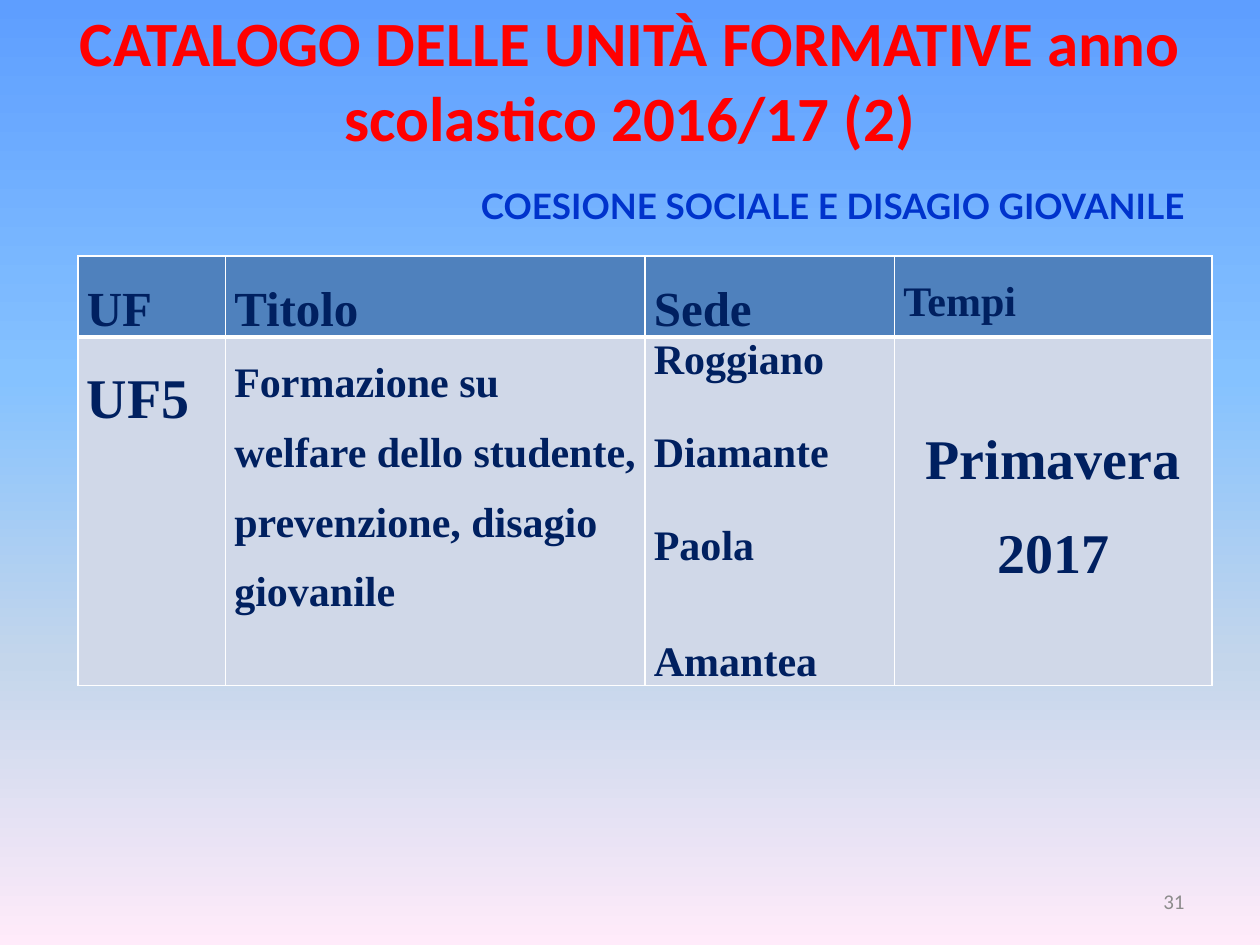
from lxml import etree
from pptx import Presentation
from pptx.dml.color import RGBColor
from pptx.enum.text import MSO_ANCHOR, MSO_AUTO_SIZE, PP_ALIGN
from pptx.oxml.ns import qn
from pptx.util import Inches, Pt

CENTER, LEFT, RIGHT = PP_ALIGN.CENTER, PP_ALIGN.LEFT, PP_ALIGN.RIGHT
MIDDLE = MSO_ANCHOR.MIDDLE
NO_AUTOFIT = MSO_AUTO_SIZE.NONE

COLORS = {
    "title": "FF0000",
    "subtitle": "0033CC",
    "table_text": "002060",
    "header": "4F81BD",
    "body": "D0D8E8",
    "border": "FFFFFF",
    "number": "8C8C8C",
}
BACKGROUND_STOPS = [(0, "5E9EFF"), (40, "85C2FF"), (70, "C4D6EB"), (100, "FFEBFA")]
COLUMN_WIDTHS = [1.17, 3.33, 1.98, 2.52]
ROW_HEIGHTS = [0.64, 2.75]
HEADERS = [("UF", 28), ("Titolo", 28), ("Sede", 28), ("Tempi", 24)]
PLACES = ["Roggiano", "Diamante", "Paola", "Amantea"]


def style_paragraph(paragraph, font, size, color, bold=True, alignment=LEFT):
    paragraph.alignment = alignment
    paragraph.font.name = font
    paragraph.font.size = Pt(size)
    paragraph.font.bold = bold
    paragraph.font.color.rgb = RGBColor.from_string(COLORS[color])


def paint_background(slide):
    fill = slide.background.fill
    fill.gradient()
    fill.gradient_angle = 270
    stops = slide.element.find(".//" + qn("a:gsLst"))
    for stop in list(stops):
        stops.remove(stop)
    for position, color in BACKGROUND_STOPS:
        stop = etree.SubElement(stops, qn("a:gs"), pos=str(position * 1000))
        etree.SubElement(stop, qn("a:srgbClr"), val=color)


def place_title(slide, box):
    title = slide.shapes.title
    title.left, title.top, title.width, title.height = map(Inches, box)
    frame = title.text_frame
    frame.text = "CATALOGO DELLE UNITÀ FORMATIVE anno scolastico 2016/17 (2)"
    frame.auto_size = NO_AUTOFIT
    frame.vertical_anchor = MIDDLE
    frame.margin_bottom = Inches(0.65)
    style_paragraph(frame.paragraphs[0], "Calibri", 36, "title", alignment=CENTER)


def place_text(slide, box, text, font, size, color, bold, alignment, wrap):
    frame = slide.shapes.add_textbox(*map(Inches, box)).text_frame
    frame.text = text
    frame.word_wrap = wrap
    frame.vertical_anchor = MIDDLE
    style_paragraph(frame.paragraphs[0], font, size, color, bold, alignment)


def draw_borders(cell, top, bottom):
    properties = cell._tc.get_or_add_tcPr()
    for side, width in (("L", 1), ("R", 1), ("T", top), ("B", bottom)):
        line = etree.SubElement(properties, qn("a:ln" + side), w=str(Pt(width)))
        fill = etree.SubElement(line, qn("a:solidFill"))
        etree.SubElement(fill, qn("a:srgbClr"), val=COLORS["border"])


def fill_cell(cell, lines, size, color, top, bottom, alignment=LEFT):
    draw_borders(cell, top, bottom)
    cell.fill.solid()
    cell.fill.fore_color.rgb = RGBColor.from_string(COLORS[color])
    cell.margin_left = cell.margin_right = Inches(0.07)
    cell.margin_top = cell.margin_bottom = 0
    cell.text = "\n".join(lines)
    paragraphs = cell.text_frame.paragraphs
    for paragraph in paragraphs:
        style_paragraph(paragraph, "Times New Roman", size, "table_text", alignment=alignment)
    for paragraph in paragraphs[1:]:
        paragraph.space_before = Pt(26.6)
    paragraphs[-1].line_spacing = 1.5


def place_table(slide, left, top):
    box = map(Inches, (left, top, sum(COLUMN_WIDTHS), sum(ROW_HEIGHTS)))
    table = slide.shapes.add_table(len(ROW_HEIGHTS), len(COLUMN_WIDTHS), *box).table
    table.horz_banding = False
    for column, width in zip(table.columns, COLUMN_WIDTHS):
        column.width = Inches(width)
    for row, height in zip(table.rows, ROW_HEIGHTS):
        row.height = Inches(height)
    for column, (text, size) in enumerate(HEADERS):
        fill_cell(table.cell(0, column), [text], size, "header", 1, 3)
    body = [
        (["UF5"], 32, LEFT),
        (["Formazione su welfare dello studente, prevenzione, disagio giovanile"], 24, LEFT),
        (PLACES, 24, LEFT),
        (["Primavera 2017"], 32, CENTER),
    ]
    for column, (lines, size, alignment) in enumerate(body):
        fill_cell(table.cell(1, column), lines, size, "body", 3, 1, alignment)
    table.cell(1, 3).margin_top = Inches(0.49)


def main():
    presentation = Presentation()
    presentation.slide_width, presentation.slide_height = Inches(10), Inches(7.5)
    slide = presentation.slides.add_slide(presentation.slide_layouts[5])
    paint_background(slide)
    place_title(slide, (0.5, 0.3, 9, 1.25))
    place_table(slide, 0.62, 2.03)
    place_text(slide, (7.17, 6.95, 2.33, 0.4), "31",
               "Calibri", 12, "number", False, RIGHT, True)
    place_text(slide, (3.44, 1.41, 6.34, 0.44), "COESIONE SOCIALE E DISAGIO GIOVANILE",
               "Lato", 20, "subtitle", True, CENTER, False)
    presentation.save("out.pptx")


if __name__ == "__main__":
    main()
